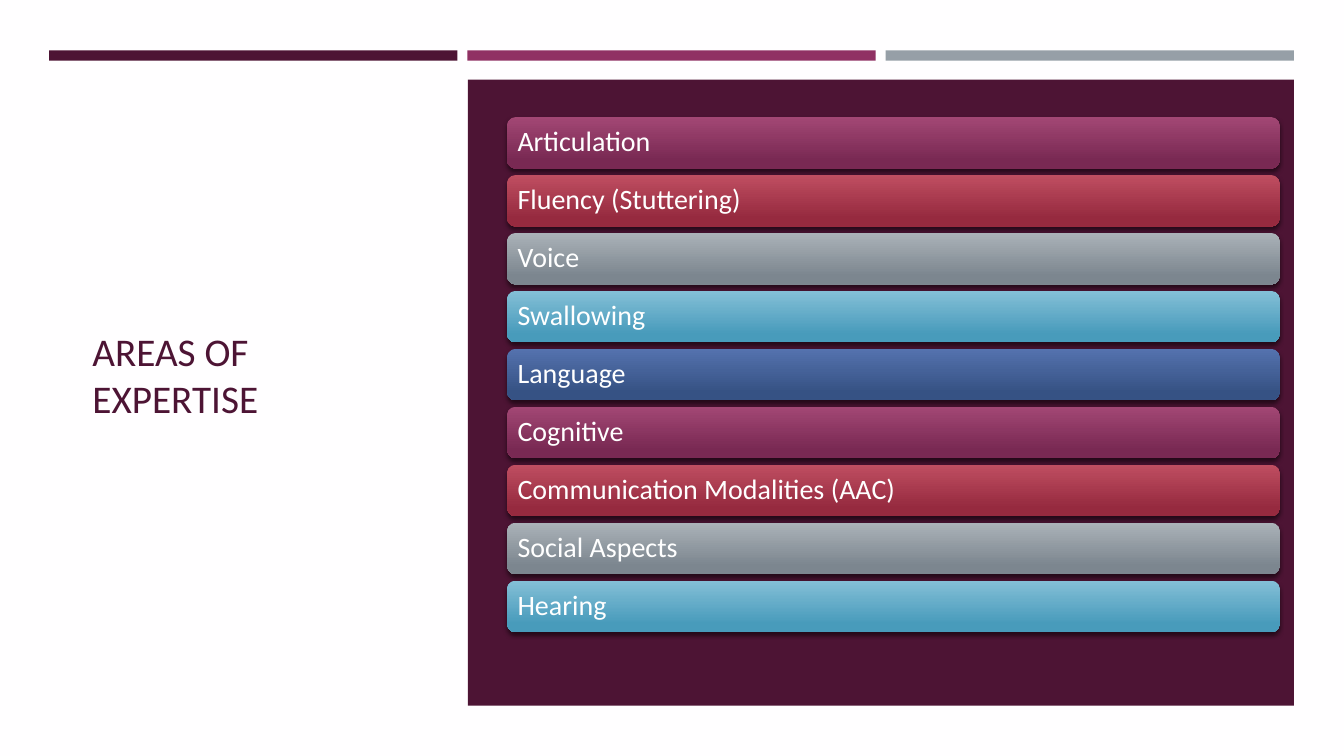
from collections import namedtuple

from lxml.etree import SubElement
from pptx import Presentation
from pptx.dml.color import RGBColor
from pptx.enum.shapes import MSO_SHAPE
from pptx.enum.text import MSO_ANCHOR, MSO_AUTO_SIZE, PP_ALIGN
from pptx.oxml.ns import qn
from pptx.util import Cm, Pt

Box = namedtuple("Box", "left top width height")

PLUM, MAGENTA, GREY = "4D1434", "903163", "969FA7"
PAPER, WHITE = "FFFEFF", "FFFFFF"
BAR_GRADIENTS = [
    ("A24774", "792953"),
    ("BF4E61", "962A3F"),
    ("ABB2B8", "7C868F"),
    ("84BFD7", "489BBB"),
    ("5472AE", "365284"),
]
AREAS = [
    "Articulation",
    "Fluency (Stuttering)",
    "Voice",
    "Swallowing",
    "Language",
    "Cognitive",
    "Communication Modalities (AAC)",
    "Social Aspects",
    "Hearing",
]


def color(value):
    return RGBColor.from_string(value)


def write(shape, text, size, fill, spacing=1.0, inset=0.25):
    frame = shape.text_frame
    frame.word_wrap = True
    frame.auto_size = MSO_AUTO_SIZE.NONE
    frame.vertical_anchor = MSO_ANCHOR.MIDDLE
    frame.margin_left = frame.margin_right = Cm(inset)
    frame.margin_top = frame.margin_bottom = Cm(0.13)
    para = frame.paragraphs[0]
    para.alignment = PP_ALIGN.LEFT
    para.line_spacing = spacing
    span = para.add_run()
    span.text = text
    span.font.name = "Calibri"
    span.font.size = Pt(size)
    span.font.color.rgb = color(fill)


def add_block(page, box, fill=None, kind=MSO_SHAPE.RECTANGLE):
    shape = page.shapes.add_shape(kind, *map(Cm, box))
    shape.shadow.inherit = False
    shape.line.fill.background()
    if fill:
        shape.fill.solid()
        shape.fill.fore_color.rgb = color(fill)
    return shape


def add_gradient(shape, colors):
    shape.fill.gradient()
    shape.fill.gradient_angle = 270
    for stop, position, value in zip(shape.fill.gradient_stops, (0, 0.84), colors):
        stop.position = position
        stop.color.rgb = color(value)


def add_shadow(shape):
    effects = shape._element.spPr.find(qn("a:effectLst"))
    shadow = SubElement(effects, qn("a:outerShdw"), blurRad=str(Pt(3)),
                        dist=str(Pt(2)), dir="5400000", rotWithShape="0")
    tint = SubElement(shadow, qn("a:srgbClr"), val="000000")
    SubElement(tint, qn("a:alpha"), val="55000")


def add_title(page, box, text):
    title = page.shapes.title
    title.left, title.top, title.width, title.height = map(Cm, box)
    write(title, text, size=28, fill=PLUM)


def add_header_strips(page, box, gap=0.25):
    fills = [PLUM, MAGENTA, GREY]
    width = (box.width - gap * (len(fills) - 1)) / len(fills)
    for index, fill in enumerate(fills):
        left = box.left + index * (width + gap)
        add_block(page, Box(left, box.top, width, box.height), fill)


def add_area_panel(page, box, areas):
    add_block(page, box, PLUM)
    pitch, height = 1.46, 1.3
    for index, area in enumerate(areas):
        place = Box(box.left + 0.99, box.top + 0.94 + index * pitch,
                    box.width - 1.35, height)
        bar = add_block(page, place, kind=MSO_SHAPE.ROUNDED_RECTANGLE)
        add_gradient(bar, BAR_GRADIENTS[index % len(BAR_GRADIENTS)])
        add_shadow(bar)
        write(bar, area, size=20, fill=WHITE, spacing=0.9, inset=0.2)


def main():
    deck = Presentation()
    deck.slide_width, deck.slide_height = Cm(33.87), Cm(19.05)
    page = deck.slides.add_slide(deck.slide_layouts[5])
    page.background.fill.solid()
    page.background.fill.fore_color.rgb = color(PAPER)
    add_title(page, Box(2.08, 2.9, 8.48, 13.08), "AREAS OF EXPERTISE")
    add_header_strips(page, Box(1.24, 1.27, 31.37, 0.26))
    add_area_panel(page, Box(11.79, 2.01, 20.82, 15.77), AREAS)
    deck.save("out.pptx")


if __name__ == "__main__":
    main()
